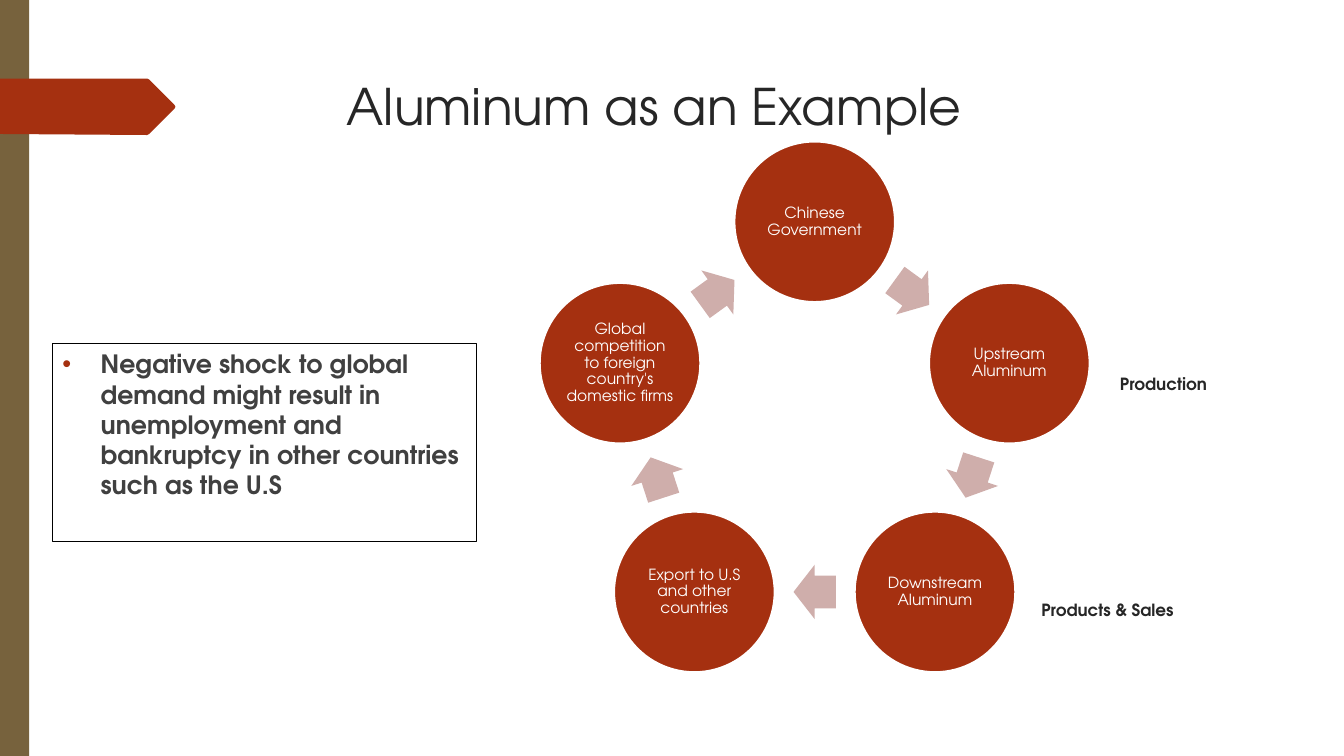
import math
from dataclasses import dataclass

import pptx
import pptx.dml.color
import pptx.enum.shapes
import pptx.enum.text
import pptx.oxml
import pptx.oxml.ns
import pptx.util
from pptx.util import Inches

RGBColor = pptx.dml.color.RGBColor
MSO_SHAPE = pptx.enum.shapes.MSO_SHAPE
PP_ALIGN = pptx.enum.text.PP_ALIGN
MSO_ANCHOR = pptx.enum.text.MSO_ANCHOR

RUST = RGBColor(0xA5, 0x30, 0x10)
BROWN = RGBColor(0x77, 0x62, 0x3D)
PINK = RGBColor(0xCF, 0xAE, 0xAB)
INK = RGBColor(0x26, 0x26, 0x26)
GRAY = RGBColor(0x40, 0x40, 0x40)
WHITE = RGBColor(0xFF, 0xFF, 0xFF)
BLACK = RGBColor(0, 0, 0)
FONT = "TeX Gyre Adventor"

CYCLE_X, CYCLE_Y, CYCLE_R = 8.08, 4.23, 2.03
CIRCLE_D = 1.59
ARROW_W, ARROW_H = 0.42, 0.54

STAGES = [
    "Chinese Government",
    "Upstream Aluminum",
    "Downstream Aluminum",
    "Export to U.S and other countries",
    "Global competition to foreign country's domestic firms",
]


@dataclass
class Label:
    text: str
    x: float
    y: float
    w: float
    h: float
    size: int
    bold: bool


LABELS = [
    Label("\tAluminum as an Example", 2.84, 0.7, 9.75, 1.4, 36, False),
    Label("Production", 11.01, 3.66, 1.27, 0.39, 12, True),
    Label("Products & Sales", 10.23, 5.9, 1.6, 0.39, 12, True),
]


def add_text(p, text: str, size: int, color: RGBColor, bold: bool = False) -> None:
    r = p.add_run()
    r.text = text
    r.font.name = FONT
    r.font.size = pptx.util.Pt(size)
    r.font.bold = bold
    r.font.color.rgb = color


def style(sp, fill: RGBColor | None, line: RGBColor | None = None, width: float = 1) -> None:
    sp.shadow.inherit = False
    if fill is None:
        sp.fill.background()
    else:
        sp.fill.solid()
        sp.fill.fore_color.rgb = fill
    if line is None:
        sp.line.fill.background()
    else:
        sp.line.color.rgb = line
        sp.line.width = pptx.util.Pt(width)


def add_centered(s, kind, x: float, y: float, w: float, h: float):
    return s.shapes.add_shape(kind, Inches(x - w / 2), Inches(y - h / 2), Inches(w), Inches(h))


def polar(radius: float, degrees: float) -> tuple[float, float]:
    a = math.radians(degrees)
    return CYCLE_X + radius * math.sin(a), CYCLE_Y - radius * math.cos(a)


def add_frame(s) -> None:
    bar = s.shapes.add_shape(MSO_SHAPE.RECTANGLE, 0, 0, Inches(0.29), Inches(7.5))
    style(bar, BROWN)
    outline = [(1.46, 0.78), (1.48, 0.79), (1.73, 1.04), (1.74, 1.06),
               (1.73, 1.08), (1.48, 1.33), (1.46, 1.34), (0, 1.33)]
    fb = s.shapes.build_freeform(0, Inches(0.78))
    fb.add_line_segments([(Inches(x), Inches(y)) for x, y in outline], close=True)
    style(fb.convert_to_shape(), RUST)


def add_label(s, label: Label) -> None:
    sp = s.shapes.add_textbox(Inches(label.x), Inches(label.y), Inches(label.w), Inches(label.h))
    tf = sp.text_frame
    tf.word_wrap = True
    p = tf.paragraphs[0]
    p._p.get_or_add_pPr().set("defTabSz", str(Inches(0.5)))
    add_text(p, label.text, label.size, INK, label.bold)


def add_cycle(s, stages: list[str]) -> None:
    step = 360 / len(stages)
    apothem = CYCLE_R * math.cos(math.radians(step / 2))
    for i, stage in enumerate(stages):
        x, y = polar(CYCLE_R, i * step)
        sp = add_centered(s, MSO_SHAPE.OVAL, x, y, CIRCLE_D, CIRCLE_D)
        style(sp, RUST, WHITE, 1.25)
        tf = sp.text_frame
        tf.word_wrap = True
        tf.vertical_anchor = MSO_ANCHOR.MIDDLE
        tf.margin_left = tf.margin_right = tf.margin_top = tf.margin_bottom = Inches(0.02)
        p = tf.paragraphs[0]
        p.alignment = PP_ALIGN.CENTER
        p.line_spacing = 0.9
        add_text(p, stage, 11, WHITE)

        turn = (i + 0.5) * step
        x, y = polar(apothem, turn)
        arrow = add_centered(s, MSO_SHAPE.RIGHT_ARROW, x, y, ARROW_W, ARROW_H)
        arrow.adjustments[0] = 0.6
        arrow.adjustments[1] = 0.5
        arrow.rotation = turn
        style(arrow, PINK)


def add_bullet(p, char: str, color: RGBColor, indent: float) -> None:
    pPr = p._p.get_or_add_pPr()
    pPr.set("marL", str(Inches(indent)))
    pPr.set("indent", str(-Inches(indent)))
    ns = pptx.oxml.ns.nsdecls("a")
    for xml in (f'<a:buClr {ns}><a:srgbClr val="{color}"/></a:buClr>',
                f'<a:buFont {ns} typeface="Arial"/>',
                f'<a:buChar {ns} char="{char}"/>'):
        pPr.append(pptx.oxml.parse_xml(xml))


def add_impact_box(s) -> None:
    sp = s.shapes.add_shape(MSO_SHAPE.RECTANGLE, Inches(0.52), Inches(3.41), Inches(4.21), Inches(1.96))
    style(sp, None, BLACK, 0.75)
    tf = sp.text_frame
    tf.word_wrap = True
    tf.vertical_anchor = MSO_ANCHOR.TOP
    p = tf.paragraphs[0]
    p.alignment = PP_ALIGN.LEFT
    p.space_before = pptx.util.Pt(10)
    add_bullet(p, "•", RUST, 0.38)
    add_text(p, "Negative shock to global demand might result in unemployment and "
                "bankruptcy in other countries such as the U.S", 18, GRAY, True)


def main() -> None:
    prs = pptx.Presentation()
    prs.slide_width, prs.slide_height = Inches(13.33), Inches(7.5)
    s = prs.slides.add_slide(prs.slide_layouts[6])
    add_frame(s)
    add_cycle(s, STAGES)
    for label in LABELS:
        add_label(s, label)
    add_impact_box(s)
    prs.save("out.pptx")


if __name__ == "__main__":
    main()
